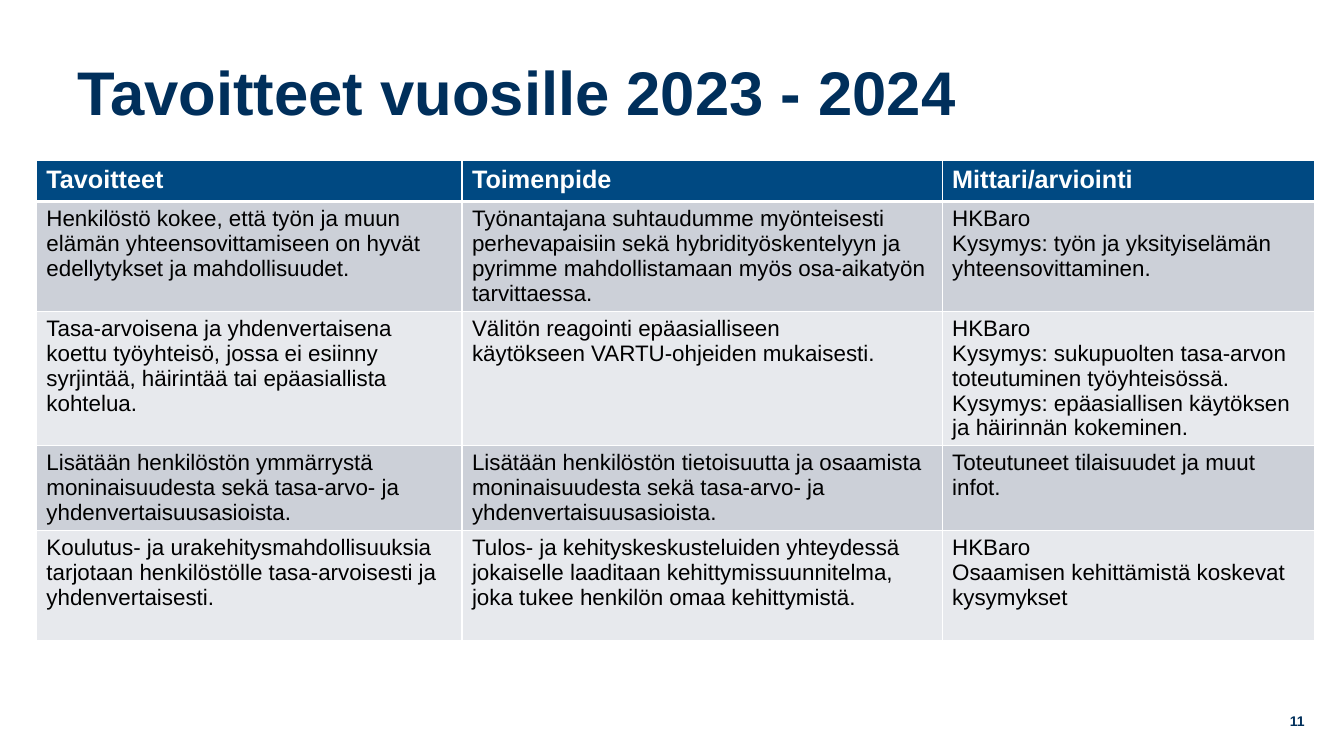
from lxml import etree
from pptx import Presentation
from pptx.dml.color import RGBColor
from pptx.enum.text import MSO_ANCHOR, PP_ALIGN
from pptx.oxml.ns import qn
from pptx.util import Pt

LEFT, RIGHT = PP_ALIGN.LEFT, PP_ALIGN.RIGHT
MIDDLE = MSO_ANCHOR.MIDDLE

NAVY = RGBColor(0x00, 0x2F, 0x5B)
BLUE = RGBColor(0x00, 0x49, 0x82)
GREY = RGBColor(0xCC, 0xD0, 0xD8)
PALE = RGBColor(0xE7, 0xE9, 0xED)
WHITE = RGBColor(0xFF, 0xFF, 0xFF)
BLACK = RGBColor(0x00, 0x00, 0x00)

WIDTHS = [304, 343, 266]
HEIGHTS = [29.5, 78, 96, 60.5, 78.5]
GOALS = [
    ["Tavoitteet", "Toimenpide", "Mittari/arviointi"],
    ["Henkilöstö kokee, että työn ja muun elämän yhteensovittamiseen "
     "on hyvät edellytykset ja mahdollisuudet.",
     "Työnantajana suhtaudumme myönteisesti perhevapaisiin sekä "
     "hybridityöskentelyyn ja pyrimme mahdollistamaan myös "
     "osa-aikatyön tarvittaessa.",
     "HKBaro\nKysymys: työn ja yksityiselämän yhteensovittaminen."],
    ["Tasa-arvoisena ja yhdenvertaisena koettu työyhteisö, jossa ei "
     "esiinny syrjintää, häirintää tai epäasiallista kohtelua.",
     "Välitön reagointi epäasialliseen\n"
     "käytökseen VARTU-ohjeiden mukaisesti.",
     "HKBaro\nKysymys: sukupuolten tasa-arvon toteutuminen työyhteisössä.\n"
     "Kysymys: epäasiallisen käytöksen ja häirinnän kokeminen."],
    ["Lisätään henkilöstön ymmärrystä moninaisuudesta sekä tasa-arvo- "
     "ja yhdenvertaisuusasioista.",
     "Lisätään henkilöstön tietoisuutta ja osaamista moninaisuudesta "
     "sekä tasa-arvo- ja yhdenvertaisuusasioista.",
     "Toteutuneet tilaisuudet ja muut infot."],
    ["Koulutus- ja urakehitysmahdollisuuksia tarjotaan henkilöstölle "
     "tasa-arvoisesti ja yhdenvertaisesti.",
     "Tulos- ja kehityskeskusteluiden yhteydessä jokaiselle laaditaan "
     "kehittymissuunnitelma, joka tukee henkilön omaa kehittymistä.",
     "HKBaro\nOsaamisen kehittämistä koskevat kysymykset"],
]


class Page:
    """Holds the font and the slide being filled."""

    def __init__(self, slide, font):
        self.slide = slide
        self.font = font

    def text(self, frame, words, size, color, bold, align=LEFT):
        frame.text = words
        frame.word_wrap = True
        for par in frame.paragraphs:
            par.alignment = align
            for run in par.runs:
                run.font.name = self.font
                run.font.size = Pt(size)
                run.font.bold = bold
                run.font.color.rgb = color

    def title(self, words, x, y, w, h):
        box = self.slide.shapes.title
        box.left, box.top, box.width, box.height = map(Pt, (x, y, w, h))
        self.text(box.text_frame, words, 44, NAVY, True)
        box.text_frame.vertical_anchor = MIDDLE

    def label(self, words, x, y, w, h):
        box = self.slide.shapes.add_textbox(*map(Pt, (x, y, w, h)))
        self.text(box.text_frame, words, 10, NAVY, True, RIGHT)
        box.text_frame.vertical_anchor = MIDDLE

    def edge(self, cell, side, width):
        props = cell._tc.get_or_add_tcPr()
        line = etree.SubElement(props, qn("a:ln" + side), w=str(Pt(width)))
        fill = etree.SubElement(line, qn("a:solidFill"))
        etree.SubElement(fill, qn("a:srgbClr"), val=str(WHITE))

    def table(self, rows, x, y, widths, heights):
        size = map(Pt, (x, y, sum(widths), sum(heights)))
        grid = self.slide.shapes.add_table(len(rows), len(widths), *size).table
        for col, width in zip(grid.columns, widths):
            col.width = Pt(width)
        for i, (row, height) in enumerate(zip(rows, heights)):
            grid.rows[i].height = Pt(height)
            head = i == 0
            fill = BLUE if head else GREY if i % 2 else PALE
            edges = {"L": 1, "R": 1, "T": 3 if i == 1 else 1,
                     "B": 3 if head else 1}
            for j, words in enumerate(row):
                cell = grid.cell(i, j)
                for side, width in edges.items():
                    self.edge(cell, side, width)
                cell.fill.solid()
                cell.fill.fore_color.rgb = fill
                self.text(cell.text_frame, words, 18 if head else 16,
                          WHITE if head else BLACK, head)


def main():
    deck = Presentation()
    deck.slide_width, deck.slide_height = Pt(960), Pt(540)
    page = Page(deck.slides.add_slide(deck.slide_layouts[5]), "Arial")
    page.title("Tavoitteet vuosille 2023 - 2024", 48, 13, 766, 104.5)
    page.table(GOALS, 26, 114.5, WIDTHS, HEIGHTS)
    page.label("11", 723, 500.5, 216, 29)
    deck.save("out.pptx")


if __name__ == "__main__":
    main()
